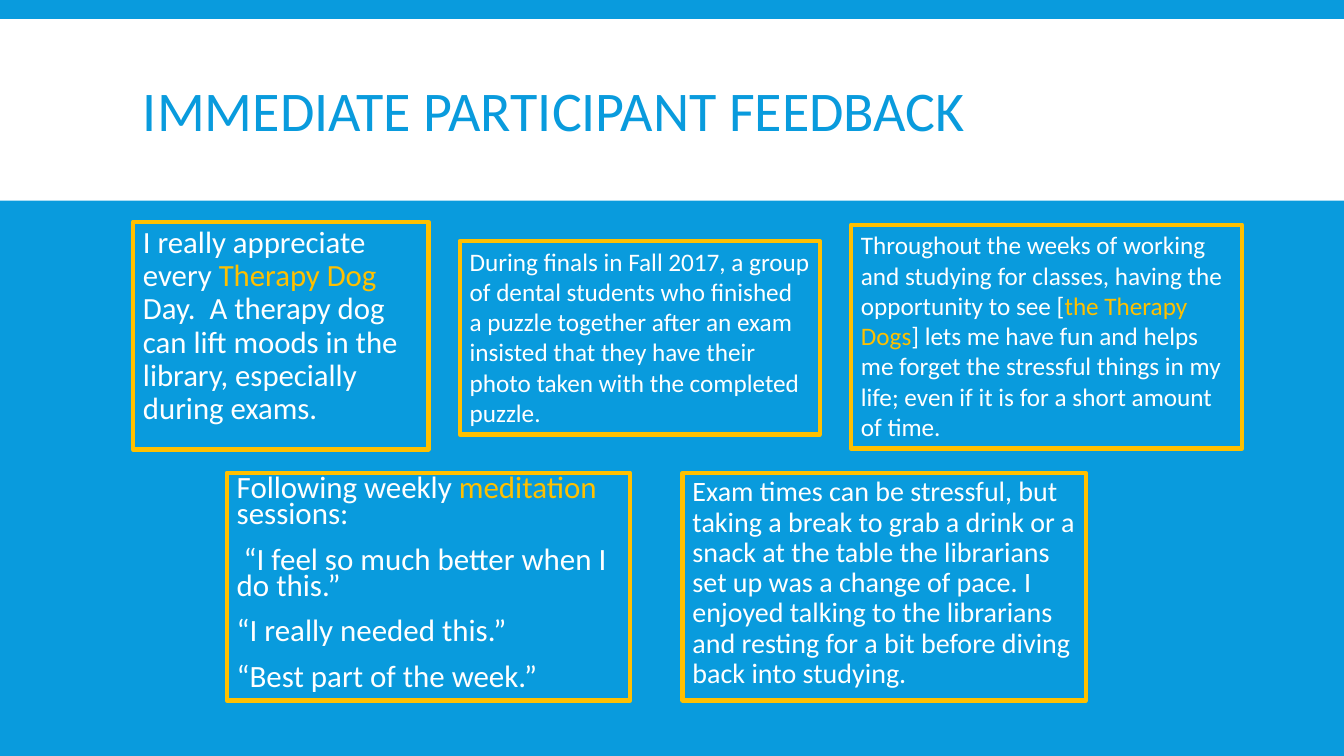
from dataclasses import dataclass

from pptx import Presentation
from pptx.dml.color import RGBColor
from pptx.enum.shapes import MSO_SHAPE as Shape
from pptx.enum.text import MSO_ANCHOR as Anchor, MSO_AUTO_SIZE as AutoSize, PP_ALIGN as Align
from pptx.slide import Slide
from pptx.text.text import TextFrame
from pptx.util import Inches, Pt

BLUE, WHITE, GOLD = "099BDD", "FFFFFF", "FFC000"
FONT = "Calibri"


@dataclass
class Run:
    text: str
    color: str = WHITE


@dataclass
class Paragraph:
    runs: list[Run]
    size: float
    line_spacing: float = 1.0
    before: float = 0
    after: float = 0


@dataclass
class Box:
    left: float
    top: float
    width: float
    height: float
    paragraphs: list[Paragraph]
    grows: bool = False


def meditation_line(*runs: Run, before: float = 12, after: float = 2) -> Paragraph:
    return Paragraph(list(runs), 22.1, 0.7, before, after)


TITLE = Paragraph([Run("IMMEDIATE PARTICIPANT FEEDBACK", BLUE)], 40, 0.85)

FEEDBACK = [
    Box(1.32, 2.2, 2.93, 2.26, [Paragraph([
        Run("I really appreciate every "),
        Run("Therapy Dog ", GOLD),
        Run("Day.  A therapy dog can lift moods in the library, especially during exams."),
    ], 22, 0.9, 12, 2)]),
    Box(4.56, 2.39, 3.57, 1.92, [Paragraph([
        Run("During finals in Fall 2017, a group of dental students who finished a puzzle "
            "together after an exam insisted that they have their photo taken with the "
            "completed puzzle."),
    ], 18)], grows=True),
    Box(8.44, 2.23, 3.88, 2.22, [Paragraph([
        Run("Throughout the weeks of working and studying for classes, having the "
            "opportunity to see ["),
        Run("the Therapy Dogs", GOLD),
        Run("] lets me have fun and helps me forget the stressful things in my life; "
            "even if it is for a short amount of time."),
    ], 18)], grows=True),
    Box(2.25, 4.69, 4, 2.26, [
        meditation_line(Run("Following weekly "), Run("meditation", GOLD),
                        Run(" sessions:"), before=18),
        meditation_line(Run(" “I feel so much better when I do this.”")),
        meditation_line(Run("“I really needed this.”")),
        meditation_line(Run("“Best part of the week.”"), after=0),
    ]),
    Box(6.77, 4.69, 4, 2.26, [Paragraph([
        Run("Exam times can be stressful, but taking a break to grab a drink or a snack at "
            "the table the librarians set up was a change of pace. I enjoyed talking to the "
            "librarians and resting for a bit before diving back into studying."),
    ], 20, 0.9, 12, 2)]),
]


def rgb(color: str) -> RGBColor:
    return RGBColor.from_string(color)


def write(frame: TextFrame, paragraphs: list[Paragraph], anchor: Anchor) -> None:
    frame.word_wrap = True
    frame.vertical_anchor = anchor
    for index, content in enumerate(paragraphs):
        paragraph = frame.add_paragraph() if index else frame.paragraphs[0]
        paragraph.alignment = Align.LEFT
        paragraph.line_spacing = content.line_spacing
        paragraph.space_before = Pt(content.before)
        paragraph.space_after = Pt(content.after)
        for part in content.runs:
            run = paragraph.add_run()
            run.text = part.text
            run.font.name = FONT
            run.font.size = Pt(content.size)
            run.font.color.rgb = rgb(part.color)


def add_title_band(slide: Slide) -> None:
    band = slide.shapes.add_shape(
        Shape.RECTANGLE, Inches(0), Inches(0.19), Inches(13.33), Inches(1.8))
    band.shadow.inherit = False
    band.fill.solid()
    band.fill.fore_color.rgb = rgb(WHITE)
    band.line.fill.background()
    title = slide.shapes.add_textbox(Inches(1.32), Inches(0.31), Inches(10.7), Inches(1.65))
    write(title.text_frame, [TITLE], Anchor.MIDDLE)


def add_feedback(slide: Slide, box: Box) -> None:
    shape = slide.shapes.add_shape(
        Shape.RECTANGLE, Inches(box.left), Inches(box.top),
        Inches(box.width), Inches(box.height))
    shape.shadow.inherit = False
    shape.fill.background()
    shape.line.color.rgb = rgb(GOLD)
    shape.line.width = Pt(3)
    write(shape.text_frame, box.paragraphs, Anchor.TOP)
    shape.text_frame.auto_size = AutoSize.SHAPE_TO_FIT_TEXT if box.grows else AutoSize.NONE


def main() -> None:
    presentation = Presentation()
    presentation.slide_width = Inches(13.33)
    presentation.slide_height = Inches(7.5)
    slide = presentation.slides.add_slide(presentation.slide_layouts[6])
    slide.background.fill.solid()
    slide.background.fill.fore_color.rgb = rgb(BLUE)
    add_title_band(slide)
    for box in FEEDBACK:
        add_feedback(slide, box)
    presentation.save("out.pptx")


if __name__ == "__main__":
    main()
